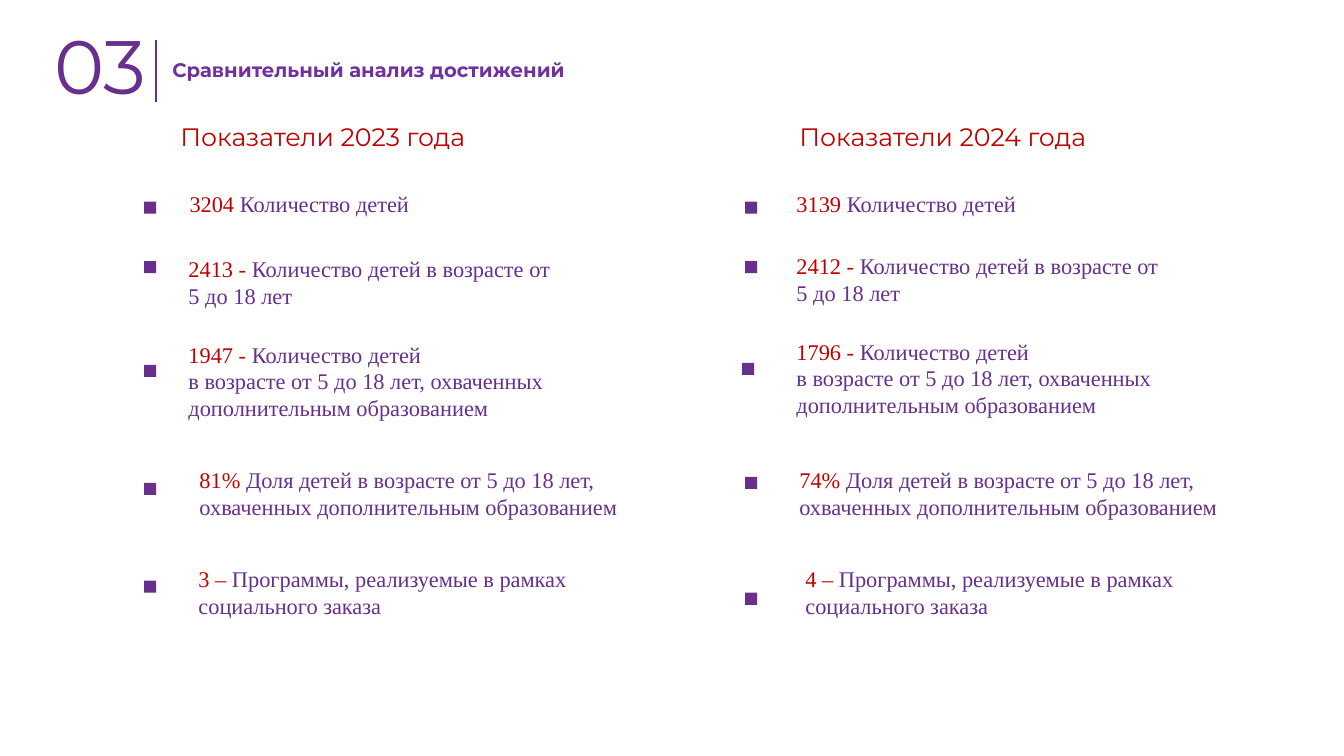
from lxml.etree import SubElement
from pptx import Presentation
from pptx.dml.color import RGBColor
from pptx.enum.shapes import MSO_CONNECTOR, MSO_SHAPE
from pptx.oxml.ns import qn
from pptx.util import Inches, Pt

HUES = {"plum": "682F8D", "title": "7030A0", "red": "C00000"}
HEAD, BODY = "Montserrat", "Times New Roman"


def hue(name):
    return RGBColor.from_string(HUES[name])


class Deck:
    def __init__(self):
        self.file = Presentation()
        self.file.slide_width = Inches(13.33)
        self.file.slide_height = Inches(7.5)
        self.slide = self.file.slides.add_slide(self.file.slide_layouts[6])
        self.shapes = self.slide.shapes

    def mark(self, x, y, size=0.12):
        box = self.shapes.add_shape(
            MSO_SHAPE.RECTANGLE, *map(Inches, (x, y, size, size)))
        box.shadow.inherit = False
        box.fill.solid()
        box.fill.fore_color.rgb = hue("plum")
        box.line.fill.background()

    def line(self, x, top, end):
        rule = self.shapes.add_connector(
            MSO_CONNECTOR.STRAIGHT, *map(Inches, (x, top, x, end)))
        rule.line.color.rgb = hue("plum")
        rule.line.width = Pt(1.42)
        SubElement(rule._element.spPr, qn("a:effectLst"))

    def text(self, text, x, y, w, h, lead="", size=16, font=BODY,
             color="plum", bold=False, pad=False, indent=0.01, space=None):
        """Write text in a box, after an optional red lead."""
        frame = self.shapes.add_textbox(*map(Inches, (x, y, w, h))).text_frame
        frame.word_wrap = True
        if not pad:
            frame.margin_left = frame.margin_right = frame.margin_bottom = 0
            frame.margin_top = Inches(0.01)
        para = frame.paragraphs[0]
        para._p.get_or_add_pPr().set("marL", str(Inches(indent)))
        if space:
            para.line_spacing = space
        parts = [(lead, "red")] if lead else []
        for i, row in enumerate(text.split("\n")):
            if i:
                parts.append(None)
            parts.append((row, color))
        for part in parts:
            if part is None:
                para.add_line_break()
                continue
            run = para.add_run()
            run.text = part[0]
            run.font.size = Pt(size)
            run.font.name = font
            run.font.bold = bold
            run.font.color.rgb = hue(part[1])


# Label, box width and height, padding, then for each year:
# value, text x and y, mark x and y
ROWS = [
    ("Количество детей", 4.1, 0.55, False,
     [("3204 ", 1.87, 1.88, 1.43, 2), ("3139 ", 7.89, 1.88, 7.39, 2)]),
    ("Количество детей в возрасте от 5 до 18 лет", 3.64, 0.55, False,
     [("2413 - ", 1.86, 2.52, 1.43, 2.59),
      ("2412 - ", 7.89, 2.49, 7.39, 2.59)]),
    ("Количество детей \nв возрасте от 5 до 18 лет, охваченных "
     "дополнительным образованием", 4.1, 0.82, False,
     [("1947 - ", 1.86, 3.37, 1.43, 3.62),
      ("1796 - ", 7.89, 3.34, 7.36, 3.6)]),
    ("Доля детей в возрасте от 5 до 18 лет, охваченных "
     "дополнительным образованием", 4.48, 0.64, True,
     [("81% ", 1.87, 4.58, 1.43, 4.79), ("74% ", 7.82, 4.58, 7.39, 4.73)]),
    ("Программы, реализуемые в рамках социального заказа",
     4.67, 0.64, True,
     [("3 – ", 1.87, 5.56, 1.43, 5.76), ("4 – ", 7.89, 5.56, 7.39, 5.88)]),
]


def main():
    deck = Deck()

    # Header
    deck.line(1.55, 0.4, 1.01)
    deck.text("03", 0.53, 0.18, 1.03, 0.92, size=54, font=HEAD)
    deck.text("Сравнительный анализ достижений", 1.7, 0.53, 8.79, 0.26,
              size=14, font=HEAD, color="title", bold=True, space=1.15)

    # Column heads
    for year, x in ((2023, 1.68), (2024, 7.82)):
        deck.text(f"Показатели {year} года", x, 1.15, 4.48, 0.4,
                  size=18, font=HEAD, color="red", pad=True)

    # Figures for both years
    for label, w, h, pad, pair in ROWS:
        for lead, x, y, left, top in pair:
            deck.mark(left, top)
            deck.text(label, x, y, w, h, lead=lead, pad=pad,
                      indent=0 if label.startswith("Программы") else 0.01)

    deck.file.save("out.pptx")


if __name__ == "__main__":
    main()
